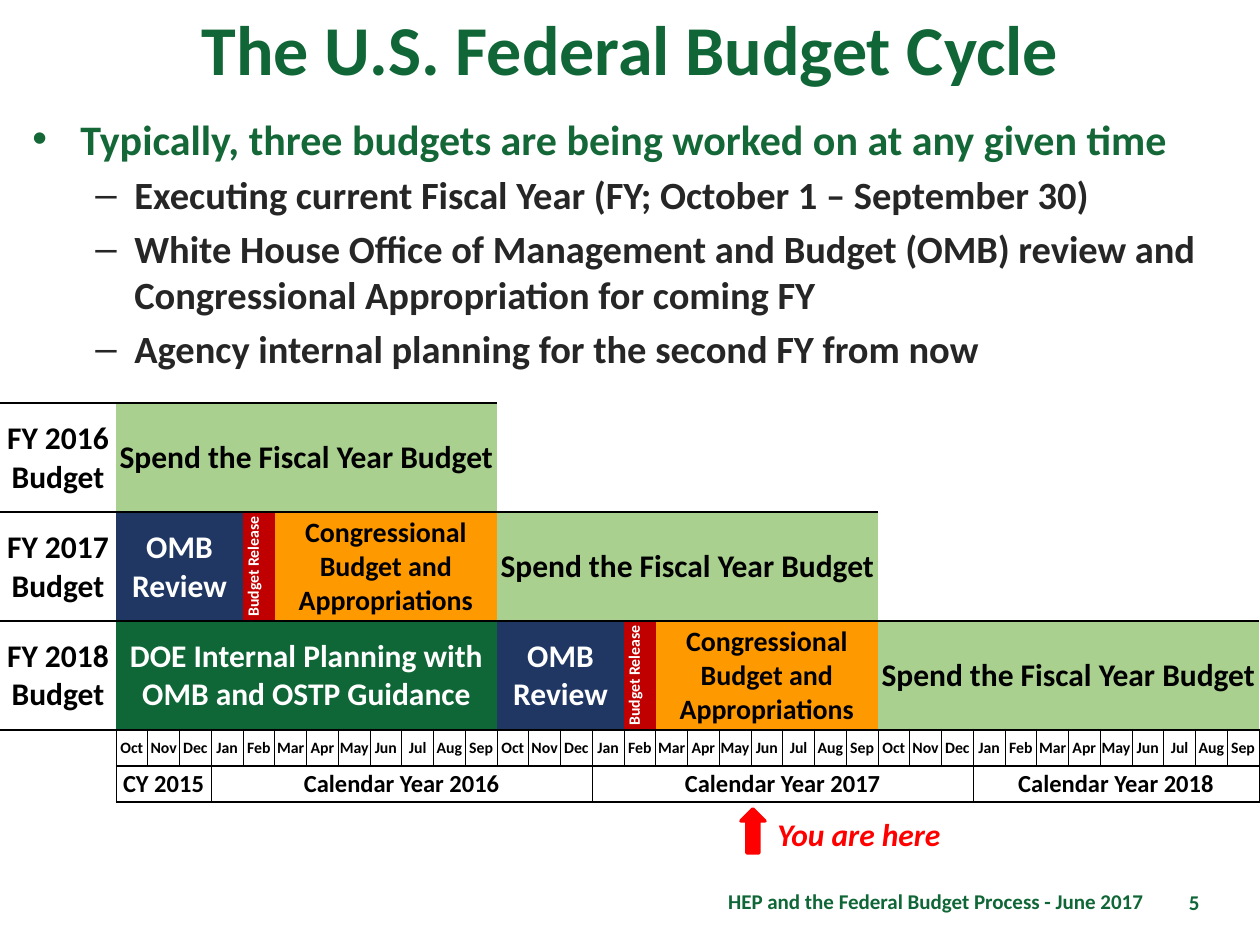
from lxml import etree
from pptx import Presentation, util as u
from pptx.dml.color import RGBColor
from pptx.enum import shapes, text
from pptx.oxml.ns import qn

HEX = {
    "title": "106636", "lead": "146737", "body": "262626", "foot": "0F6636",
    "black": "000000", "white": "FFFFFF", "red": "FF0000", "spend": "A9D08E",
    "omb": "203764", "send": "C00000", "cong": "FF9900", "plan": "0F6636",
}
FONT = "Calibri"
MONTHS = "Oct Nov Dec Jan Feb Mar Apr May Jun Jul Aug Sep".split()
PLAIN = "{2D5ABB26-0587-4C30-8999-92F81FD0307C}"
MID, LEFT, RIGHT = text.PP_ALIGN.CENTER, text.PP_ALIGN.LEFT, text.PP_ALIGN.RIGHT

SPEND = [(12, "Spend the Fiscal Year Budget", 18, "black", "spend")]
REVIEW = [
    (4, "OMB Review", 18, "white", "omb"),
    (1, "Budget Release", 9, "white", "send"),
    (7, "Congressional Budget and Appropriations", 16, "black", "cong"),
]
PLAN = [(12, "DOE Internal Planning with OMB and OSTP Guidance", 18, "white", "plan")]
ROWS = [
    ("FY 2016\nBudget", SPEND),
    ("FY 2017 Budget", REVIEW + SPEND),
    ("FY 2018 Budget", PLAN + REVIEW + SPEND),
]
YEARS = [(3, "CY 2015"), (12, "Calendar Year 2016"),
         (12, "Calendar Year 2017"), (9, "Calendar Year 2018")]
POINTS = [
    (0, "Typically, three budgets are being worked on at any given time"),
    (1, "Executing current Fiscal Year (FY; October 1 – September 30)"),
    (1, "White House Office of Management and Budget (OMB) review and "
        "Congressional Appropriation for coming FY"),
    (1, "Agency internal planning for the second FY from now"),
]


def px(n):
    """Turn pixels into EMU."""
    return u.Emu(round(n * 914400 / 126))


def tint(name):
    """Look up a colour."""
    return RGBColor.from_string(HEX[name])


def write(para, words, size, hue, align=LEFT, slant=False):
    """Add one bold run to a paragraph."""
    para.alignment = align
    run = para.add_run()
    run.text = words
    font = run.font
    font.name, font.size, font.bold, font.italic = FONT, u.Pt(size), True, slant
    font.color.rgb = tint(hue)


def label(slide, box, words, size, hue, align, wrap=True, slant=False):
    """Place a one-line text box."""
    frame = slide.shapes.add_textbox(*map(px, box)).text_frame
    frame.word_wrap = wrap
    frame.vertical_anchor = text.MSO_ANCHOR.MIDDLE
    write(frame.paragraphs[0], words, size, hue, align, slant)


def head(slide, box):
    """Place the slide title."""
    title = slide.shapes.title
    title.left, title.top, title.width, title.height = map(px, box)
    frame = title.text_frame
    frame.auto_size = text.MSO_AUTO_SIZE.NONE
    frame.vertical_anchor = text.MSO_ANCHOR.MIDDLE
    write(frame.paragraphs[0], "The U.S. Federal Budget Cycle", 40, "title", MID)


def points(slide, box):
    """Place the bulleted text."""
    frame = slide.shapes.add_textbox(*map(px, box)).text_frame
    frame.word_wrap = True
    looks = [("•", 48, 48, 24, "lead"), ("–", 102, 39, 22, "body")]
    for i, (level, words) in enumerate(POINTS):
        mark, inset, hang, size, hue = looks[level]
        para = frame.add_paragraph() if i else frame.paragraphs[0]
        para.level = level
        if i:
            para.space_before = u.Pt(size * 0.2)
        prop = para._p.get_or_add_pPr()
        prop.set("marL", str(px(inset)))
        prop.set("indent", str(-px(hang)))
        etree.SubElement(prop, qn("a:buFont")).set("typeface", "Arial")
        etree.SubElement(prop, qn("a:buChar")).set("char", mark)
        write(para, words, size, hue)


def edge(cell, sides):
    """Draw thin upright and thick level borders on the given sides of a cell."""
    prop = cell._tc.get_or_add_tcPr()
    for side in "LRTB":
        line = etree.SubElement(prop, qn("a:ln" + side))
        if side in sides:
            line.set("w", str(u.Pt(0.5 if side in "LR" else 1.5)))
            fill = etree.SubElement(line, qn("a:solidFill"))
            etree.SubElement(fill, qn("a:srgbClr")).set("val", HEX["black"])
        else:
            line.set("w", "0")
            etree.SubElement(line, qn("a:noFill"))


def block(grid, row, col, span, words, size, hue="black", fill=None, sides="TB"):
    """Fill a cell that spans some columns."""
    cell = grid.cell(row, col)
    for i in range(span):
        edge(grid.cell(row, col + i), sides)
    if span > 1:
        cell.merge(grid.cell(row, col + span - 1))
    if fill:
        cell.fill.solid()
        cell.fill.fore_color.rgb = tint(fill)
    if fill == "send":
        cell._tc.get_or_add_tcPr().set("vert", "vert270")
    frame = cell.text_frame
    for i, part in enumerate(words.split("\n")):
        para = frame.add_paragraph() if i else frame.paragraphs[0]
        write(para, part, size, hue, MID)


def cycle(slide, box):
    """Place the table of budgets by month."""
    tall, low, first = 109, 36, 116
    count = len(MONTHS) * 3
    grid = slide.shapes.add_table(5, count + 1, *map(px, box)).table
    grid.first_row = grid.horz_banding = False
    grid._tbl.tblPr.find(qn("a:tableStyleId")).text = PLAIN
    for i, col in enumerate(grid.columns):
        col.width = u.Emu(px(box[2] - first) // count) if i else px(first)
    for i, row in enumerate(grid.rows):
        row.height = px(tall if i < len(ROWS) else low)
    for cell in grid.iter_cells():
        cell.margin_left = cell.margin_top = cell.margin_right = px(1)
        cell.margin_bottom = 0
        cell.vertical_anchor = text.MSO_ANCHOR.MIDDLE
        cell.fill.background()
        cell.text_frame.paragraphs[0]._p.get_or_add_endParaRPr().set("sz", "900")
    for row, (name, parts) in enumerate(ROWS):
        block(grid, row, 0, 1, name, 18)
        col = 1
        for span, words, size, hue, fill in parts:
            block(grid, row, col, span, words, size, hue, fill)
            col += span
    for i in range(count):
        block(grid, 3, i + 1, 1, MONTHS[i % 12], 9, sides="LRTB")
    col = 1
    for span, words in YEARS:
        block(grid, 4, col, span, words, 14, sides="LRTB")
        col += span


def here(slide, box):
    """Place the arrow and its caption."""
    left, top, wide, high = box
    arrow = slide.shapes.add_shape(
        shapes.MSO_SHAPE.UP_ARROW, *map(px, (left, top, 24, 44)))
    arrow.shadow.inherit = False
    arrow.fill.solid()
    arrow.fill.fore_color.rgb = arrow.line.color.rgb = tint("red")
    arrow.line.width = u.Pt(2)
    label(slide, (left + 24, top, wide - 24, high), "You are here", 18, "red",
          LEFT, False, True)


def foot(slide, box):
    """Place the footer and the slide number."""
    left, top, wide, high = box
    label(slide, (left, top, 725, high),
          "HEP and the Federal Budget Process - June 2017", 12, "foot", RIGHT)
    label(slide, (left + wide - 53, top + 1, 53, high), "5", 12, "foot", RIGHT)


def main():
    """Build the slide."""
    deck = Presentation()
    deck.slide_width, deck.slide_height = px(1260), px(945)
    slide = deck.slides.add_slide(deck.slide_layouts[5])
    points(slide, (20, 107, 1218, 270))
    head(slide, (0, 0, 1260, 95))
    foot(slide, (431, 876, 781, 50))
    cycle(slide, (0, 403, 1260, 399))
    here(slide, (741, 809, 214, 50))
    deck.save("out.pptx")


if __name__ == "__main__":
    main()
